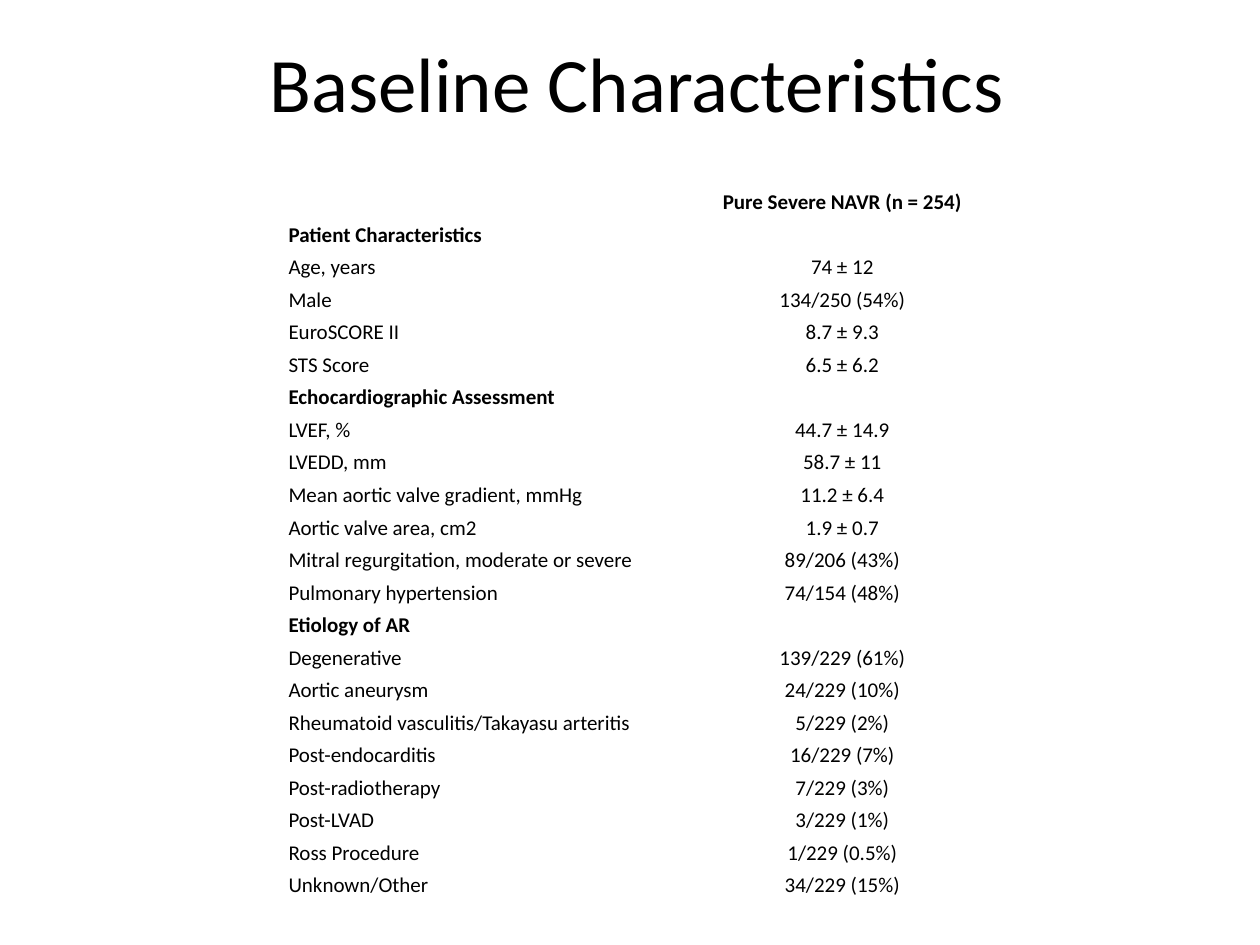
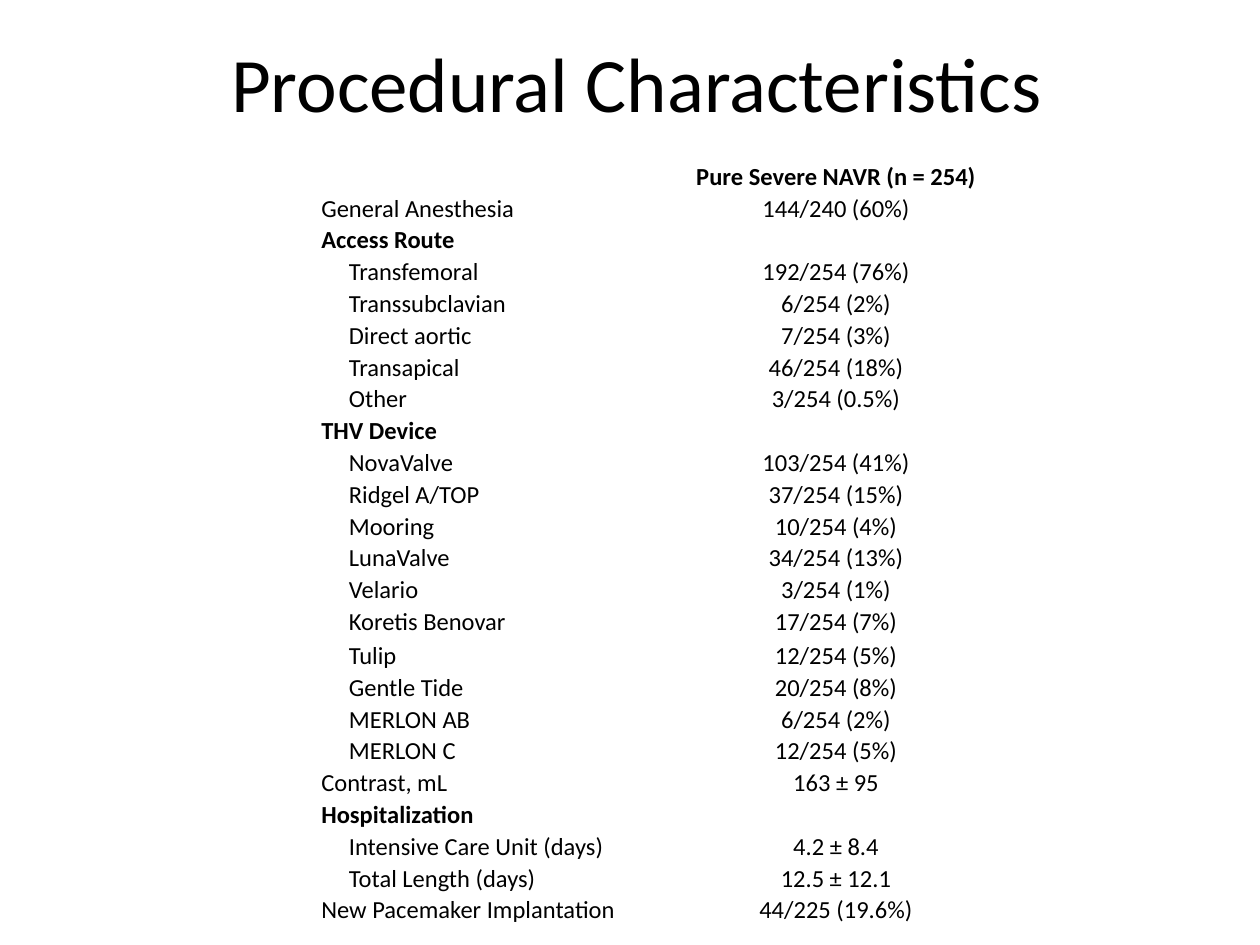
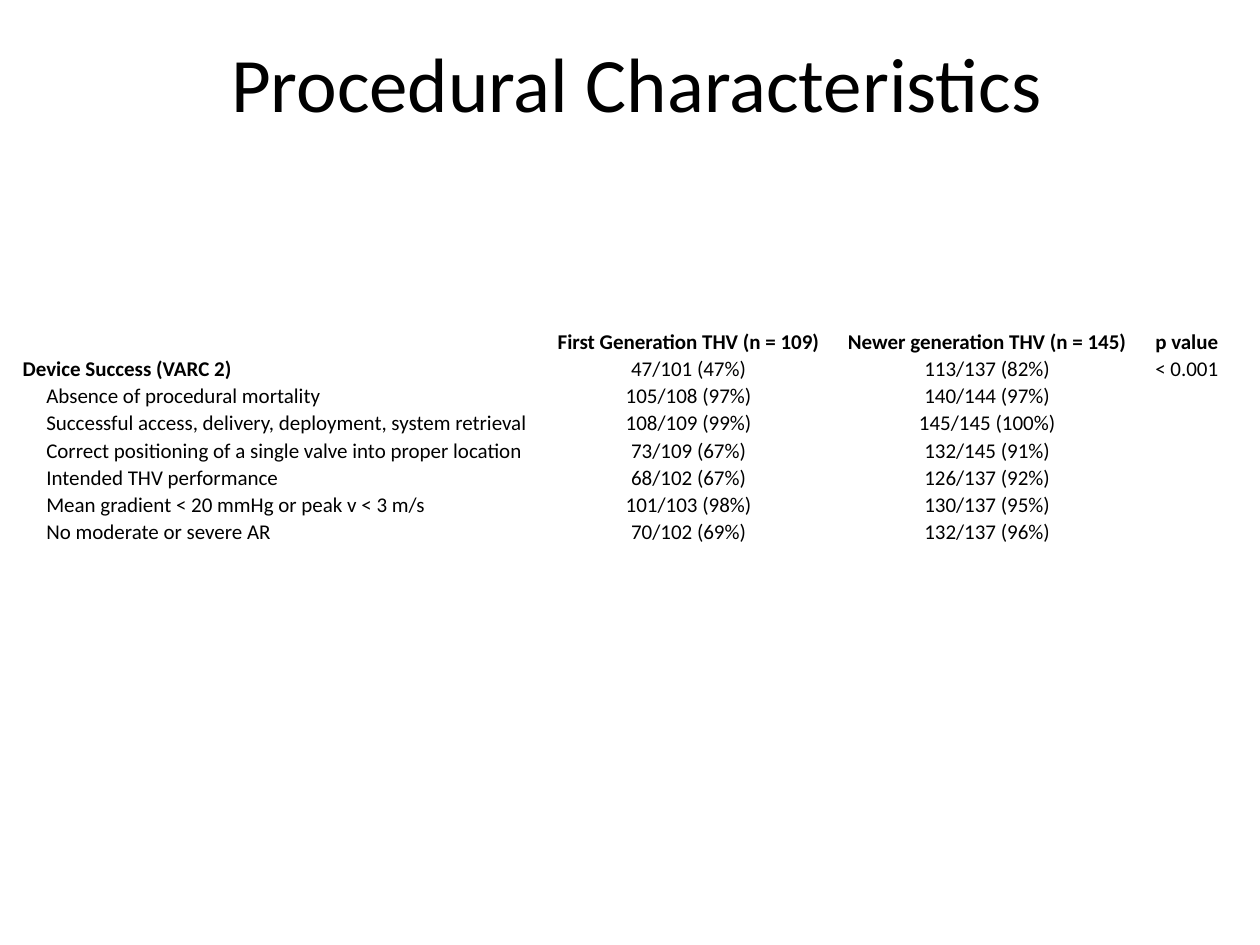
"""Build three slides of clinical tables."""
from lxml import etree
from pptx import Presentation
from pptx import util as u
from pptx.dml import color
from pptx.enum import text
from pptx.oxml import ns

hues = {"ink": "000000", "line": "FFFFFF"}
face = "Calibri"
mid, left = text.PP_ALIGN.CENTER, text.PP_ALIGN.LEFT

base = [
    ("", "Pure Severe NAVR (n = 254)"),
    ("*Patient Characteristics", ""),
    ("Age, years", "74 ± 12"),
    ("Male", "134/250 (54%)"),
    ("EuroSCORE II", "8.7 ± 9.3"),
    ("STS Score", "6.5 ± 6.2"),
    ("*Echocardiographic Assessment", ""),
    ("LVEF, %", "44.7 ± 14.9"),
    ("LVEDD, mm", "58.7 ± 11"),
    ("Mean aortic valve gradient, mmHg", "11.2 ± 6.4"),
    ("Aortic valve area, cm2", "1.9 ± 0.7"),
    ("Mitral regurgitation, moderate or severe", "89/206 (43%)"),
    ("Pulmonary hypertension", "74/154 (48%)"),
    ("*Etiology of AR", ""),
    ("Degenerative", "139/229 (61%)"),
    ("Aortic aneurysm", "24/229 (10%)"),
    ("Rheumatoid vasculitis/Takayasu arteritis", "5/229 (2%)"),
    ("Post-endocarditis", "16/229 (7%)"),
    ("Post-radiotherapy", "7/229 (3%)"),
    ("Post-LVAD", "3/229 (1%)"),
    ("Ross Procedure", "1/229 (0.5%)"),
    ("Unknown/Other", "34/229 (15%)"),
]
route = [
    ("", "Pure Severe NAVR (n = 254)"),
    ("General Anesthesia", "144/240 (60%)"),
    ("*Access Route", ""),
    (">Transfemoral", "192/254 (76%)"),
    (">Transsubclavian", "6/254 (2%)"),
    (">Direct aortic", "7/254 (3%)"),
    (">Transapical", "46/254 (18%)"),
    (">Other", "3/254 (0.5%)"),
    ("*THV Device", ""),
    (">NovaValve", "103/254 (41%)"),
    (">Ridgel A/TOP", "37/254 (15%)"),
    (">Mooring", "10/254 (4%)"),
    (">LunaValve", "34/254 (13%)"),
    (">Velario", "3/254 (1%)"),
    (">Koretis Benovar", "17/254 (7%)"),
    (">Tulip", "12/254 (5%)"),
    (">Gentle Tide", "20/254 (8%)"),
    (">MERLON AB", "6/254 (2%)"),
    (">MERLON C", "12/254 (5%)"),
    ("Contrast, mL", "163 ± 95"),
    ("*Hospitalization", ""),
    (">Intensive Care Unit (days)", "4.2 ± 8.4"),
    (">Total Length (days)", "12.5 ± 12.1"),
    ("New Pacemaker Implantation", "44/225 (19.6%)"),
]
goal = [
    ("", "First Generation THV (n = 109)", "Newer generation THV (n = 145)", "p value"),
    ("*Device Success (VARC 2)", "47/101 (47%)", "113/137 (82%)", "< 0.001"),
    (">Absence of procedural mortality", "105/108 (97%)", "140/144 (97%)", ""),
    (">Successful access, delivery, deployment, system retrieval",
     "108/109 (99%)", "145/145 (100%)", ""),
    (">Correct positioning of a single valve into proper location",
     "73/109 (67%)", "132/145 (91%)", ""),
    (">Intended THV performance", "68/102 (67%)", "126/137 (92%)", ""),
    (">Mean gradient < 20 mmHg or peak v < 3 m/s", "101/103 (98%)", "130/137 (95%)", ""),
    (">No moderate or severe AR", "70/102 (69%)", "132/137 (96%)", ""),
]

pages = [
    {"title": "Baseline Characteristics", "rows": base, "at": (2.28, 1.45),
     "cols": (3.26, 2.29), "high": 5.69, "size": 12, "tall": {}},
    {"title": "Procedural Characteristics", "rows": route, "at": (2.54, 1.27),
     "cols": (2.77, 2.65), "high": 6.06, "size": 14, "tall": {15: 0.27}},
    {"title": "Procedural Characteristics", "rows": goal, "at": (0.17, 2.6),
     "cols": (4.11, 2.37, 2.37, 0.8), "high": 1.73, "size": 12, "tall": {}},
]


def write(para, words, size, bold, align):
    para.alignment = align
    if not words:
        etree.SubElement(para._p, ns.qn("a:endParaRPr"), sz=str(size * 100))
        return
    run = para.add_run()
    run.text = words
    for key, val in {"name": face, "size": u.Pt(size), "bold": bold}.items():
        setattr(run.font, key, val)
    run.font.color.rgb = color.RGBColor.from_string(hues["ink"])


def edge(cell):
    props = cell._tc.get_or_add_tcPr()
    for side in ("lnL", "lnR", "lnT", "lnB"):
        line = etree.SubElement(props, ns.qn("a:" + side), w=str(u.Pt(1)))
        fill = etree.SubElement(line, ns.qn("a:solidFill"))
        etree.SubElement(fill, ns.qn("a:srgbClr"), val=hues["line"])
    cell.fill.background()


deck = Presentation()
deck.slide_width, deck.slide_height = u.Inches(10), u.Inches(7.5)

for page in pages:
    slide = deck.slides.add_slide(deck.slide_layouts[6])
    box = slide.shapes.add_textbox(u.Inches(-0.17), u.Inches(0), u.Inches(10.45), u.Inches(1.29))
    frame = box.text_frame
    frame.word_wrap = True
    frame.vertical_anchor = text.MSO_ANCHOR.MIDDLE
    write(frame.paragraphs[0], page["title"], 44, False, mid)

    rows, cols, size = page["rows"], page["cols"], page["size"]
    x, y = page["at"]
    grid = slide.shapes.add_table(len(rows), len(cols), u.Inches(x), u.Inches(y),
                                  u.Inches(sum(cols)), u.Inches(page["high"])).table
    grid.first_row = grid.horz_banding = False
    for col, wide in zip(grid.columns, cols):
        col.width = u.Inches(wide)
    for r, high in page["tall"].items():
        grid.rows[r].height = u.Inches(high)

    for r, row in enumerate(rows):
        for c, words in enumerate(row):
            cell = grid.cell(r, c)
            edge(cell)
            inset = size / 64 if words.startswith(">") else 0
            look = {
                "margin_left": u.Inches(0.01 + inset),
                "margin_right": u.Inches(0.01),
                "margin_top": u.Inches(0.01),
                "margin_bottom": 0,
                "vertical_anchor": text.MSO_ANCHOR.BOTTOM,
            }
            for key, val in look.items():
                setattr(cell, key, val)
            bold = r == 0 or words.startswith("*")
            write(cell.text_frame.paragraphs[0], words.lstrip("*>"), size, bold, mid if c else left)

deck.save("out.pptx")
